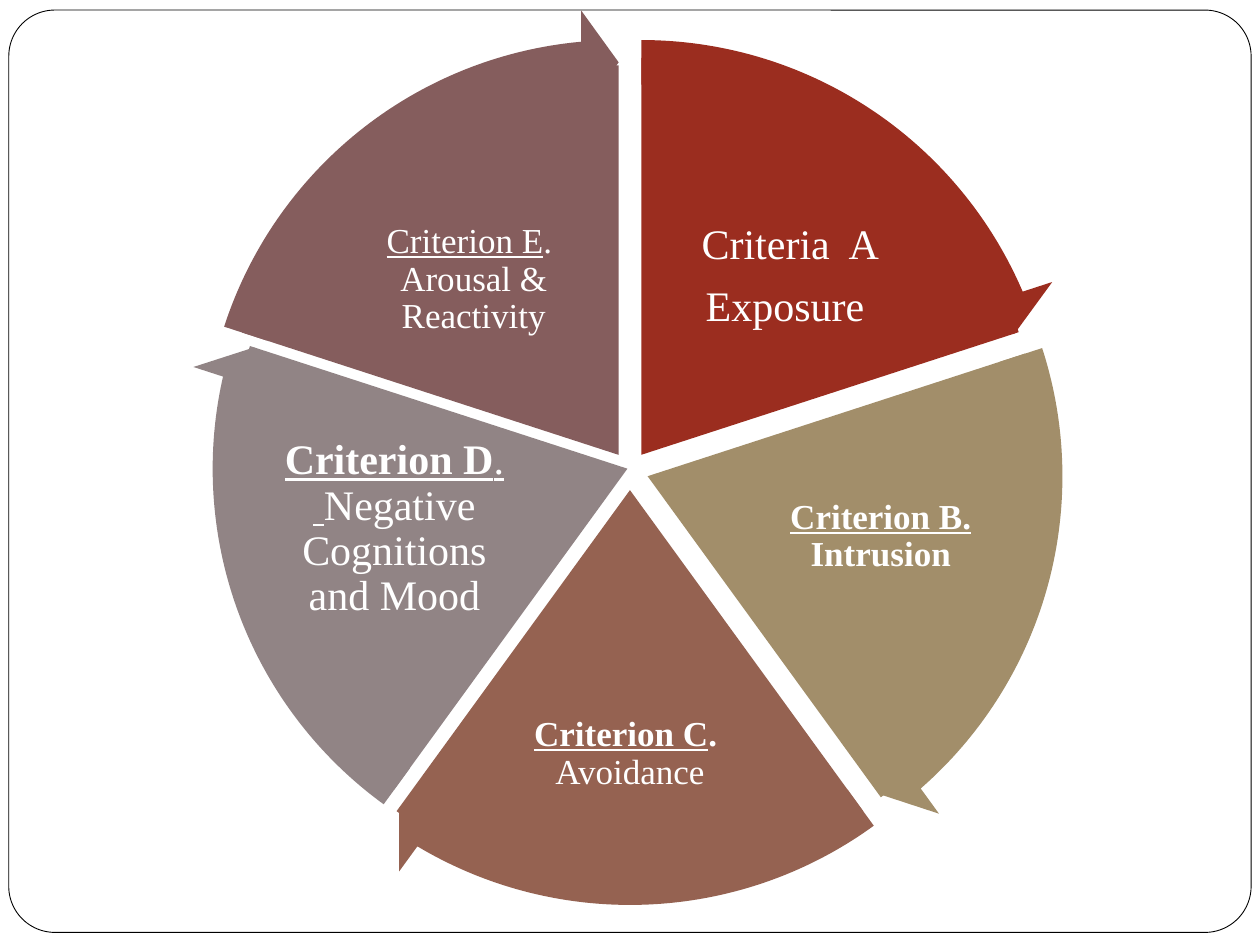
from pptx import Presentation
from pptx import util as u
from pptx.dml.color import RGBColor
from pptx.enum import shapes, text

WHITE = RGBColor(0xFF, 0xFF, 0xFF)
BLACK = RGBColor(0x00, 0x00, 0x00)
RED = RGBColor(0x9B, 0x2D, 0x1F)
SAND = RGBColor(0xA2, 0x8E, 0x6A)
BROWN = RGBColor(0x95, 0x62, 0x51)
GREY = RGBColor(0x91, 0x84, 0x85)
MAUVE = RGBColor(0x85, 0x5D, 0x5D)

TOP, STEP, FULL = 162, 43.2, 216
ARROW_SIZE, ARROW_GAP = 7.08, 3.28
BOLD, LINE = {"bold": True}, {"underline": True}
BOTH = {**BOLD, **LINE}

deck = Presentation()
deck.slide_width, deck.slide_height = u.Inches(10), u.Inches(7.5)
slide = deck.slides.add_slide(deck.slide_layouts[6])


def add_figure(kind, box, color, adjustments):
    figure = slide.shapes.add_shape(kind, *map(u.Inches, box))
    figure.shadow.inherit = False
    figure.fill.solid()
    figure.fill.fore_color.rgb = color
    figure.line.fill.background()
    for index, value in enumerate(adjustments):
        figure.adjustments[index] = value
    return figure


frame = add_figure(shapes.MSO_SHAPE.ROUNDED_RECTANGLE, (0.07, 0.08, 9.86, 7.32), WHITE, [0.05])
frame.line.color.rgb = BLACK
frame.line.width = u.Pt(0.5)

criteria = [
    (RED, (1.94, 0.46, 6.3, 6.3), (1.55, 0.07), (5.22, 1.52, 2.02, 1.35), 24,
     [[("Criteria  A ", {})], [("Exposure", {})]]),
    (SAND, (1.99, 0.63, 6.3, 6.3), (1.6, 0.24), (6.05, 3.51, 1.88, 1.5), 20,
     [[("Criterion B. ", BOTH), ("Intrusion", BOLD)]]),
    (BROWN, (1.85, 0.74, 6.3, 6.3), (1.46, 0.35), (4.1, 5.16, 1.8, 1.65), 20,
     [[("Criterion C", BOTH), (".  ", BOLD), ("Avoidance", {})]]),
    (GREY, (1.83, 0.57, 6.3, 6.3), (1.44, 0.18), (2.19, 3.45, 1.88, 1.5), 24,
     [[("Criterion D", BOTH), (".  ", LINE), ("Negative Cognitions and Mood", {})]]),
    (MAUVE, (1.76, 0.52, 6.3, 6.18), (1.37, 0.07), (2.75, 1.56, 2.02, 1.32), 20,
     [[("Criterion E", LINE), (".  Arousal & Reactivity", {})]]),
]

for order, (color, slice_box, _, label_box, size, paragraphs) in enumerate(criteria):
    start = (TOP + order * STEP) % FULL
    end = (start + STEP) % FULL
    add_figure(shapes.MSO_SHAPE.PIE, slice_box, color, [start, end])

    label = slide.shapes.add_textbox(*map(u.Inches, label_box)).text_frame
    label_format = {"word_wrap": True, "vertical_anchor": text.MSO_ANCHOR.MIDDLE}
    for side in ("left", "right", "top", "bottom"):
        label_format[f"margin_{side}"] = u.Inches(0.03)
    for name, value in label_format.items():
        setattr(label, name, value)

    for position, pieces in enumerate(paragraphs):
        paragraph = label.add_paragraph() if position else label.paragraphs[0]
        paragraph_format = {"alignment": text.PP_ALIGN.CENTER, "line_spacing": 0.9,
                            "space_after": u.Pt(size * 0.4)}
        for name, value in paragraph_format.items():
            setattr(paragraph, name, value)
        paragraph._p.get_or_add_pPr().set("rtl", "1")
        for words, style in pieces:
            run = paragraph.add_run()
            run.text = words
            run.font.color.rgb = WHITE
            font_format = {"name": "Times New Roman", "size": u.Pt(size), **style}
            for name, value in font_format.items():
                setattr(run.font, name, value)

for order, (color, _, corner, *_) in enumerate(criteria):
    start = (TOP + order * STEP) % FULL
    end = (start + STEP) % FULL
    add_figure(shapes.MSO_SHAPE.CIRCULAR_ARROW, (*corner, ARROW_SIZE, ARROW_SIZE), color,
               [0.05, ARROW_GAP, end - ARROW_GAP, start, 0.06])

deck.save("out.pptx")
